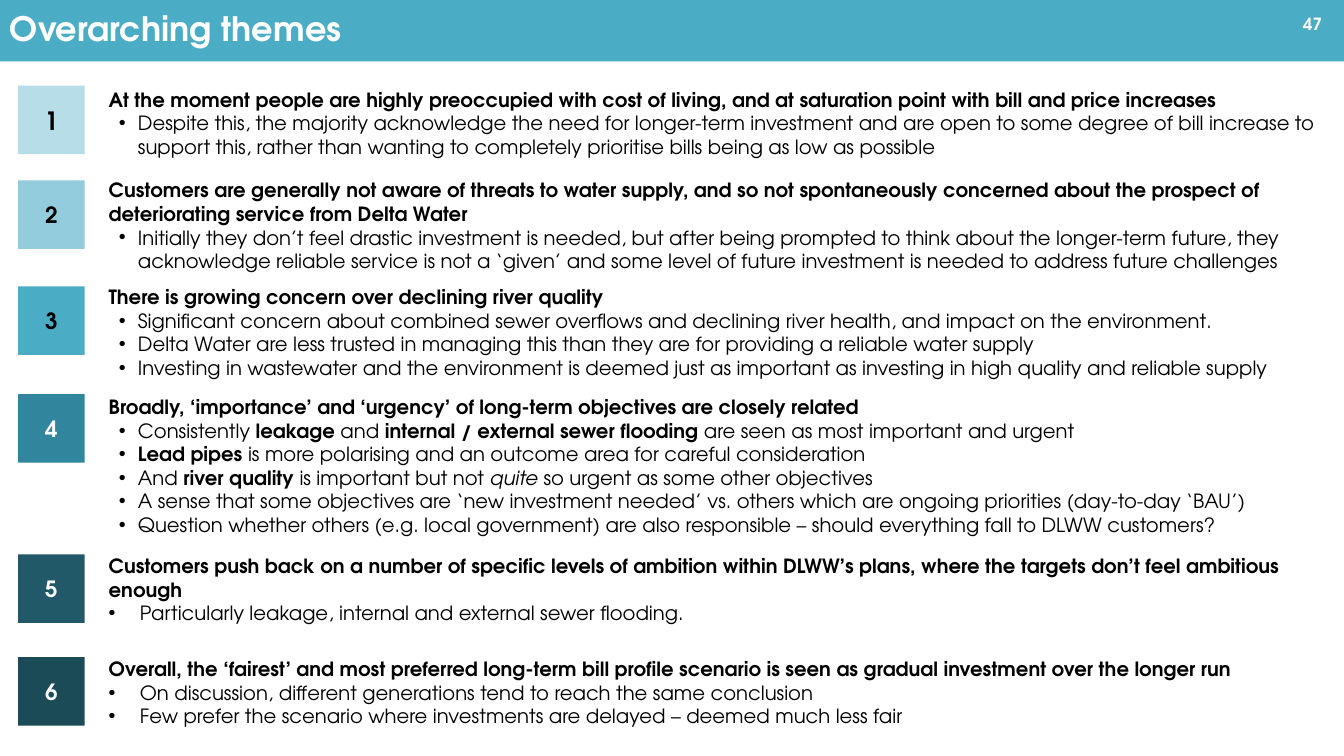
import pptx
import pptx.dml.color
import pptx.enum.shapes
import pptx.enum.text
import pptx.oxml.ns
import pptx.util
import lxml.etree

ALIGN = pptx.enum.text.PP_ALIGN
ANCHOR = pptx.enum.text.MSO_ANCHOR
EMU_PER_PX = 9144  # 100 px to the inch

NUMBER_LEFT, NUMBER_WIDTH, NUMBER_HEIGHT = 18, 66, 68
TEXT_LEFT, TEXT_WIDTH = 98, 1217
INDENTED = (29, 19)  # text margin, hanging indent
FLUSH = (31, 31)


def px(length):
    return pptx.util.Emu(length * EMU_PER_PX)


def color(hex_code):
    return pptx.dml.color.RGBColor.from_string(hex_code)


class ThemeSlide:
    font = "TeX Gyre Adventor"
    body_size = 14

    def __init__(self, slide):
        self.slide = slide

    def style(self, run, size, ink, bold=False, italic=False):
        run.font.name = self.font
        run.font.size = pptx.util.Pt(size)
        run.font.color.rgb = color(ink)
        run.font.bold = bold
        run.font.italic = italic

    def label(self, shape, text, size, ink, align):
        frame = shape.text_frame
        frame.word_wrap = True
        frame.vertical_anchor = ANCHOR.MIDDLE
        frame.text = text
        frame.paragraphs[0].alignment = align
        self.style(frame.paragraphs[0].runs[0], size, ink, bold=True)

    def block(self, box, fill, text, size, ink, align=ALIGN.CENTER):
        block = self.slide.shapes.add_shape(
            pptx.enum.shapes.MSO_SHAPE.RECTANGLE, *map(px, box))
        block.shadow.inherit = False
        block.fill.solid()
        block.fill.fore_color.rgb = color(fill)
        block.line.fill.background()
        self.label(block, text, size, ink, align)

    def caption(self, box, text, size, ink, align):
        caption = self.slide.shapes.add_textbox(*map(px, box))
        self.label(caption, text, size, ink, align)

    def bullet(self, paragraph, margin, hanging):
        properties = paragraph._p.get_or_add_pPr()
        properties.set("marL", str(px(margin)))
        properties.set("indent", str(-px(hanging)))
        for tag, key, value in (("a:buFont", "typeface", "Arial"),
                                ("a:buChar", "char", "•")):
            lxml.etree.SubElement(properties, pptx.oxml.ns.qn(tag)).set(key, value)

    def theme(self, box, heading, points, indent):
        frame = self.slide.shapes.add_textbox(*map(px, box)).text_frame
        frame.word_wrap = True
        frame.text = heading
        self.style(frame.paragraphs[0].runs[0], self.body_size, "000000", bold=True)
        for point in points:
            paragraph = frame.add_paragraph()
            self.bullet(paragraph, *indent)
            pieces = [(point, "")] if isinstance(point, str) else point
            for text, emphasis in pieces:
                run = paragraph.add_run()
                run.text = text
                self.style(run, self.body_size, "000000",
                           emphasis == "bold", emphasis == "italic")


# Number top, number fill, number ink, number size, text top, text height,
# bullet indent, heading, points
THEMES = [
    (85, "B7DEE8", "000000", 18, 82, 99, INDENTED,
     "At the moment people are highly preoccupied with cost of living, and at "
     "saturation point with bill and price increases",
     ["Despite this, the majority acknowledge the need for longer-term investment "
      "and are open to some degree of bill increase to support this, rather than "
      "wanting to completely prioritise bills being as low as possible"]),
    (179, "93CDDD", "000000", 16, 172, 129, INDENTED,
     "Customers are generally not aware of threats to water supply, and so not "
     "spontaneously concerned about the prospect of deteriorating service from "
     "Delta Water",
     ["Initially they don’t feel drastic investment is needed, but after being "
      "prompted to think about the longer-term future, they acknowledge reliable "
      "service is not a ‘given’ and some level of future investment is needed to "
      "address future challenges"]),
    (284, "4BACC6", "000000", 16, 278, 94, INDENTED,
     "There is growing concern over declining river quality",
     ["Significant concern about combined sewer overflows and declining river "
      "health, and impact on the environment.",
      "Delta Water are less trusted in managing this than they are for providing a "
      "reliable water supply",
      "Investing in wastewater and the environment is deemed just as important as "
      "investing in high quality and reliable supply"]),
    (391, "31859C", "FFFFFF", 16, 387, 94, INDENTED,
     "Broadly, ‘importance’ and ‘urgency’ of long-term objectives are closely related",
     [[("Consistently ", ""), ("leakage", "bold"), (" and ", ""),
       ("internal / external sewer flooding ", "bold"),
       ("are seen as most important and urgent", "")],
      [("Lead pipes ", "bold"),
       ("is more polarising and an outcome area for careful consideration", "")],
      [("And ", ""), ("river quality ", "bold"), ("is important but not ", ""),
       ("quite", "italic"), (" so urgent as some other objectives", "")],
      "A sense that some objectives are ‘new investment needed’ vs. others which "
      "are ongoing priorities (day-to-day ‘BAU’)",
      "Question whether others (e.g. local government) are also responsible – "
      "should everything fall to DLWW customers?"]),
    (550, "215968", "FFFFFF", 16, 545, 72, FLUSH,
     "Customers push back on a number of specific levels of ambition within "
     "DLWW’s plans, where the targets don’t feel ambitious enough",
     ["Particularly leakage, internal and external sewer flooding."]),
    (652, "1C4B58", "FFFFFF", 16, 647, 72, FLUSH,
     "Overall, the ‘fairest’ and most preferred long-term bill profile scenario is "
     "seen as gradual investment over the longer run",
     ["On discussion, different generations tend to reach the same conclusion",
      "Few prefer the scenario where investments are delayed – deemed much less fair"]),
]


def main():
    deck = pptx.Presentation()
    deck.slide_width, deck.slide_height = px(1333), px(750)
    page = ThemeSlide(deck.slides.add_slide(deck.slide_layouts[6]))

    # Title band and page number
    page.block((0, -6, 1333, 67), "4BACC6", "Overarching themes", 24, "FFFFFF", ALIGN.LEFT)
    page.caption((1234, 1, 87, 45), "47", 12, "FFFFFF", ALIGN.RIGHT)

    # Numbered themes
    for number, theme in enumerate(THEMES, start=1):
        top, fill, ink, size, text_top, text_height, indent, heading, points = theme
        page.block((NUMBER_LEFT, top, NUMBER_WIDTH, NUMBER_HEIGHT),
                   fill, str(number), size, ink)
        page.theme((TEXT_LEFT, text_top, TEXT_WIDTH, text_height),
                   heading, points, indent)

    deck.save("out.pptx")


if __name__ == "__main__":
    main()
